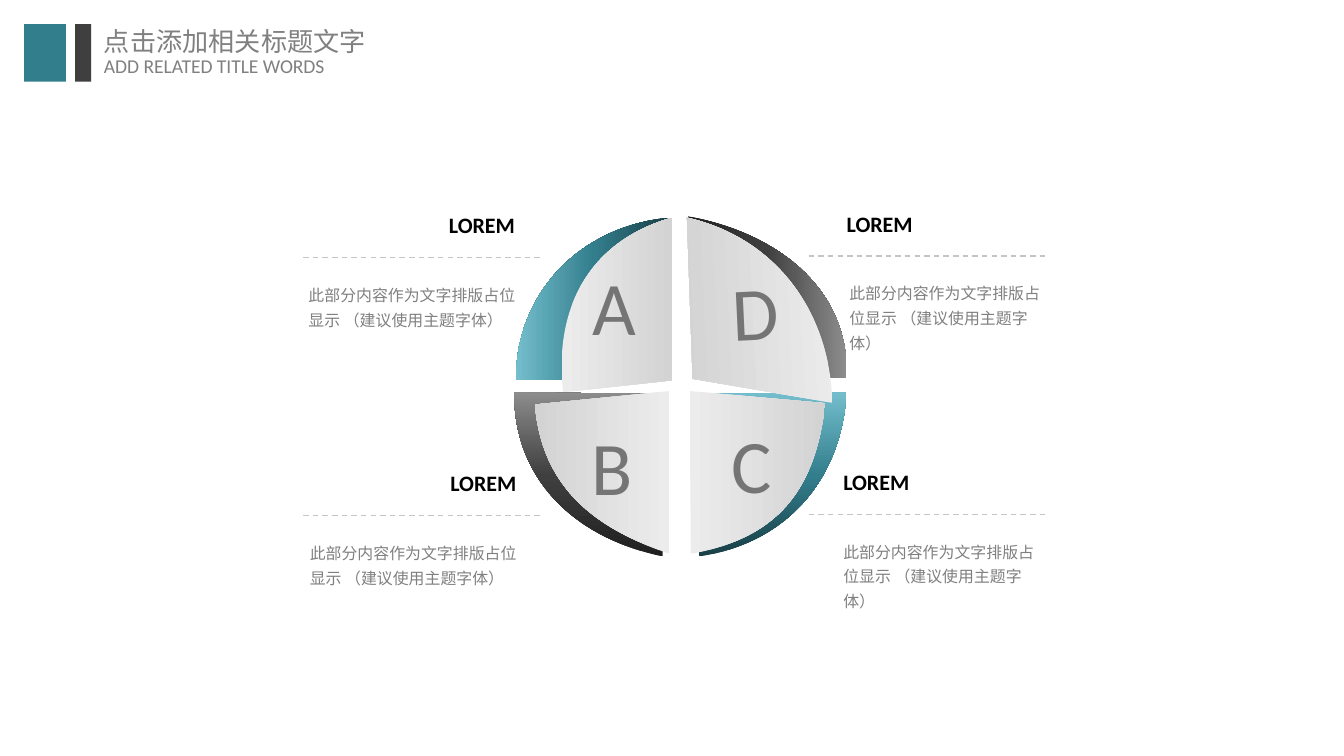
"""Build a title bar and a four-part circle diagram with captions."""
from lxml import etree
from pptx import Presentation
from pptx.dml.color import RGBColor
from pptx.enum import dml, shapes, text
from pptx.oxml import ns
from pptx.util import Pt

TEAL = RGBColor(0x33, 0x7E, 0x8D)
DARK_TEAL = RGBColor(0x19, 0x3F, 0x46)
LIGHT_TEAL = RGBColor(0x73, 0xBD, 0xCC)
CHARCOAL = RGBColor(0x3F, 0x3F, 0x3F)
DARK_CHARCOAL = RGBColor(0x20, 0x20, 0x20)
MID_GREY = RGBColor(0x8C, 0x8C, 0x8C)
PALE = RGBColor(0xEC, 0xEC, 0xEC)
SILVER = RGBColor(0xD3, 0xD3, 0xD3)
LETTER_GREY = RGBColor(0x75, 0x75, 0x75)
TEXT_GREY = RGBColor(0x80, 0x80, 0x80)
LINE_GREY = RGBColor(0xC5, 0xC5, 0xC5)
BLACK = RGBColor(0, 0, 0)

TEALS = [(0, DARK_TEAL), (49, TEAL), (100, LIGHT_TEAL)]
GREYS = [(0, DARK_CHARCOAL), (49, CHARCOAL), (100, MID_GREY)]
SILVERS = [(0, PALE), (100, SILVER)]
BODY = "此部分内容作为文字排版占位显示 （建议使用主题字体）"

deck = Presentation()
deck.slide_width, deck.slide_height = Pt(720), Pt(405)
page = deck.slides.add_slide(deck.slide_layouts[6])


def add_wedge(corners, controls, stops, angle):
    start, *others = [(Pt(x), Pt(y)) for x, y in corners]
    builder = page.shapes.build_freeform(*start)
    builder.add_line_segments(others, close=True)
    wedge = builder.convert_to_shape()
    close = wedge._element.spPr.find(".//" + ns.qn("a:close"))
    curve = etree.Element(ns.qn("a:cubicBezTo"))
    for x, y in [*controls, corners[0]]:
        etree.SubElement(curve, ns.qn("a:pt"), x=str(Pt(x) - wedge.left), y=str(Pt(y) - wedge.top))
    close.addprevious(curve)
    wedge.shadow.inherit = False
    wedge.line.fill.background()
    wedge.fill.gradient()
    wedge.fill.gradient_angle = angle
    stop_list = wedge._element.spPr.find(".//" + ns.qn("a:gsLst"))
    for old in list(stop_list):
        stop_list.remove(old)
    for position, color in stops:
        stop = etree.SubElement(stop_list, ns.qn("a:gs"), pos=str(position * 1000))
        etree.SubElement(stop, ns.qn("a:srgbClr"), val=str(color))
    return wedge


def add_text(words, left, top, width, height, size, color, font="Calibri", spacing=None, wrap=True):
    box = page.shapes.add_textbox(Pt(left), Pt(top), Pt(width), Pt(height))
    box.text_frame.word_wrap = wrap
    box.text_frame.text = words
    para = box.text_frame.paragraphs[0]
    para.line_spacing = spacing
    span = para.runs[0]
    span.font.size = Pt(size)
    span.font.name = font
    span.font.color.rgb = color
    return box


for left, width, color in [(12.9, 22.4, TEAL), (40.3, 8.6, CHARCOAL)]:
    block = page.shapes.add_shape(shapes.MSO_SHAPE.RECTANGLE, Pt(left), Pt(12.9), Pt(width), Pt(30.8))
    block.shadow.inherit = False
    block.fill.solid()
    block.fill.fore_color.rgb = color
    block.line.fill.background()

add_text("点击添加相关标题文字", 48.6, 10, 157, 24.5, 14, TEXT_GREY, "Noto Sans CJK SC", wrap=False)
add_text("ADD RELATED TITLE WORDS", 48.6, 25.2, 142, 21, 10.5, TEXT_GREY, wrap=False)

bands = [
    ([(453.4, 210.2), (375.8, 211), (374.4, 298.1)], [(423.4, 290.9), (451.4, 254.2)], TEALS, 90),
    ([(275.5, 210.2), (355.7, 211), (355, 298.1)], [(306.7, 288), (275, 255.6)], GREYS, 90),
    ([(276.5, 203.6), (358.6, 203.6), (358.6, 116.6)], [(307.4, 121.7), (275.8, 160.6)], TEALS, 180),
    ([(453.4, 202.7), (372.2, 202.3), (368.6, 115.9)], [(421.9, 126), (455.8, 159.1)], GREYS, 0),
]
for corners, controls, stops, angle in bands:
    add_wedge(corners, controls, stops, angle)

caps = [
    ("D", [(443.4, 217.7), (369.3, 201.2), (370.5, 114.8)], [(418, 128), (444.8, 169.6)],
     180, -2.8, (7.2, 10.8, 3.6)),
    ("B", [(286.6, 216.7), (358.6, 209.5), (358.6, 296.6)], [(316.1, 282.2), (290.2, 259.2)],
     180, 0, (17.3, 7.2, 10.8)),
    ("C", [(370.1, 296.6), (369.4, 209.5), (442.1, 216)], [(437, 259.9), (419, 288)],
     0, 0, (7.2, 13, 13)),
    ("A", [(301.7, 210.2), (360, 203.8), (360, 116.6)], [(314.6, 129.6), (296.6, 166.3)],
     0, 0, (7.2, 10.8, 3.6)),
]
for letter, corners, controls, angle, rotation, (left, right, bottom) in caps:
    cap = add_wedge(corners, controls, SILVERS, angle)
    cap.rotation = rotation
    frame = cap.text_frame
    frame.margin_left, frame.margin_right = Pt(left), Pt(right)
    frame.margin_top, frame.margin_bottom = Pt(3.6), Pt(bottom)
    frame.vertical_anchor = text.MSO_ANCHOR.MIDDLE
    frame.text = letter
    para = frame.paragraphs[0]
    para.alignment = text.PP_ALIGN.CENTER
    para.runs[0].font.size = Pt(40.5)
    para.runs[0].font.name = "Calibri"
    para.runs[0].font.color.rgb = LETTER_GREY

for left, top in [(162.4, 137.8), (162.4, 276.2), (433.2, 137.1), (433.2, 275.8)]:
    rule = page.shapes.add_connector(
        shapes.MSO_CONNECTOR.STRAIGHT, Pt(left), Pt(top), Pt(left + 127.4), Pt(top))
    rule.line.color.rgb = LINE_GREY
    rule.line.width = Pt(0.75)
    rule.line.dash_style = dml.MSO_LINE.DASH
    etree.SubElement(rule._element.spPr, ns.qn("a:effectLst"))

LEFT, RIGHT = text.PP_ALIGN.LEFT, text.PP_ALIGN.RIGHT
captions = [
    (157.6, 106.6, 158.2, 146.4, 125.3, RIGHT, "Arial Narrow"),
    (158.4, 244.8, 158.9, 284.6, 125.3, RIGHT, "Calibri"),
    (446.5, 105.8, 447.9, 145.4, 124.5, LEFT, "Calibri"),
    (444.7, 244.3, 444.7, 283.9, 124.5, LEFT, "Calibri"),
]
for head_left, head_top, body_left, body_top, width, alignment, font in captions:
    heading = add_text("LOREM", head_left, head_top, width, 24.5, 11.8, BLACK, spacing=1.2)
    heading.text_frame.vertical_anchor = text.MSO_ANCHOR.BOTTOM
    heading.text_frame.paragraphs[0].alignment = alignment
    heading.text_frame.paragraphs[0].runs[0].font.bold = True
    add_text(BODY, body_left, body_top, width, 53.5, 8.5, TEXT_GREY, font, 1.3)

deck.save("out.pptx")
